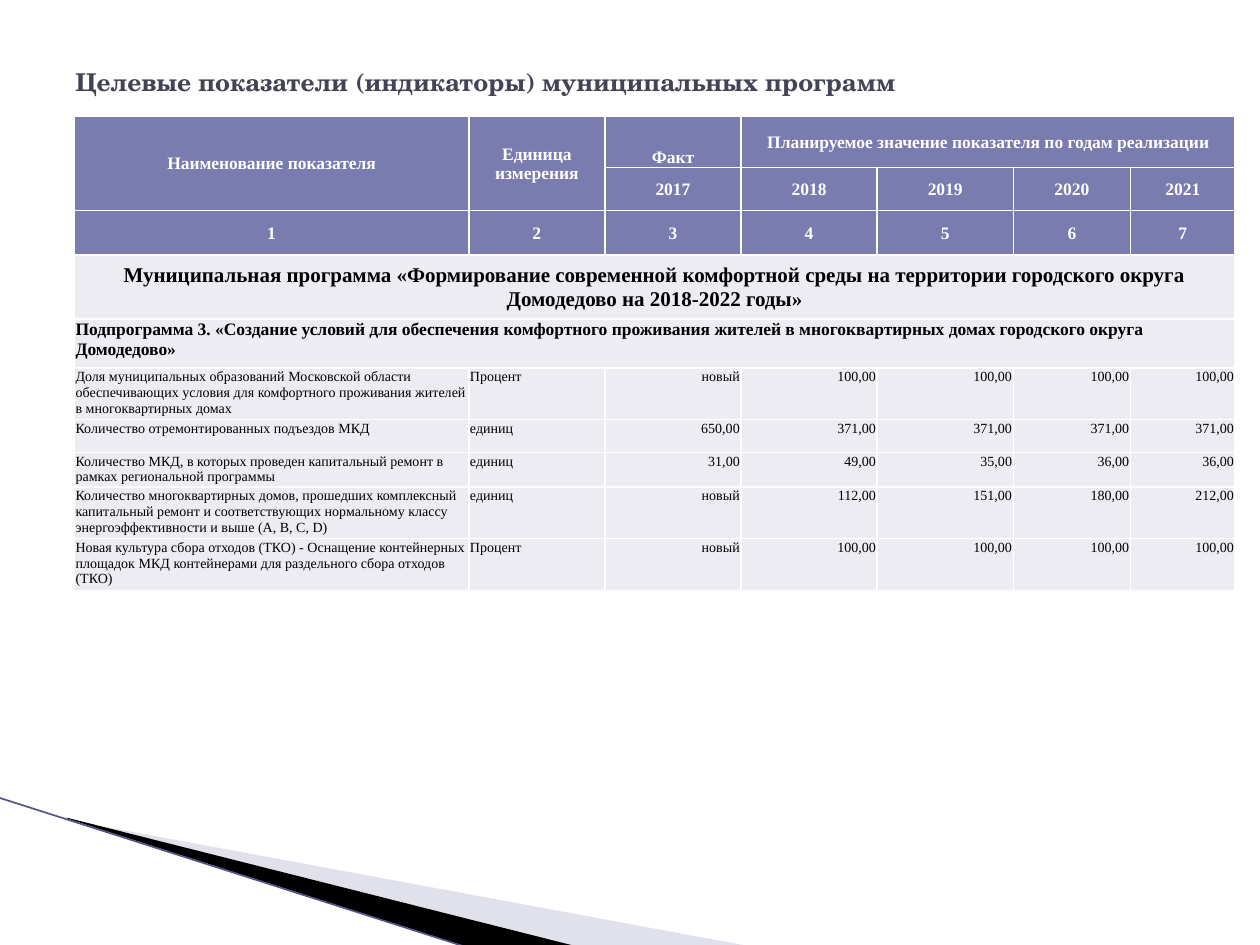
from dataclasses import dataclass

from lxml.etree import SubElement
from pptx import Presentation
from pptx.dml.color import RGBColor
from pptx.enum.text import MSO_ANCHOR as Anchor, PP_ALIGN as Align
from pptx.oxml.ns import qn
from pptx.util import Pt


@dataclass(frozen=True)
class Theme:
    title_font: str = "TeX Gyre Schola"
    table_font: str = "Times New Roman"
    title_color: str = "424456"
    header_fill: str = "7A7BAE"
    body_fill: str = "ECECF2"
    white: str = "FFFFFF"
    black: str = "000000"
    pale_wedge: str = "B6B6D1"
    wedge_line: str = "53548A"
    title_size: float = 14
    program_size: float = 12
    header_size: float = 10
    body_size: float = 8


COLUMN_WIDTHS = [225.4, 77.8, 77.8, 77.8, 77.8, 67, 59.8]
ROW_HEIGHTS = [29.5, 20.9, 25.2, 36.7, 28.1] + [18.7] * 5
HEADER_ROWS = [
    ["Наименование показателя", "Единица измерения", "Факт",
     "Планируемое значение показателя по годам реализации", "", "", ""],
    ["", "", "2017", "2018", "2019", "2020", "2021"],
    [str(number) for number in range(1, 8)],
]
PROGRAM = ("Муниципальная программа «Формирование современной комфортной среды "
           "на территории городского округа Домодедово на 2018-2022 годы»")
SUBPROGRAM = ("Подпрограмма 3. «Создание условий для обеспечения комфортного проживания "
              "жителей в многоквартирных домах городского округа Домодедово»")
INDICATORS = [
    ["Доля муниципальных образований Московской области обеспечивающих условия "
     "для комфортного проживания жителей в многоквартирных домах",
     "Процент", "новый", "100,00", "100,00", "100,00", "100,00"],
    ["Количество отремонтированных подъездов МКД",
     "единиц", "650,00", "371,00", "371,00", "371,00", "371,00"],
    ["Количество МКД, в которых проведен капитальный ремонт в рамках "
     "региональной программы",
     "единиц", "31,00", "49,00", "35,00", "36,00", "36,00"],
    ["Количество многоквартирных домов, прошедших комплексный капитальный ремонт "
     "и соответствующих нормальному классу энергоэффективности и выше (A, B, C, D)",
     "единиц", "новый", "112,00", "151,00", "180,00", "212,00"],
    ["Новая культура сбора отходов (ТКО) - Оснащение контейнерных площадок МКД "
     "контейнерами для раздельного сбора отходов (ТКО)",
     "Процент", "новый", "100,00", "100,00", "100,00", "100,00"],
]
# (first row, first column, last row, last column)
MERGES = [(0, 0, 1, 0), (0, 1, 1, 1), (0, 3, 0, 6), (3, 0, 3, 6), (4, 0, 4, 6)]


def set_values(target, values):
    for name, value in values.items():
        setattr(target, name, value)


class SlideBuilder:
    def __init__(self, slide, theme):
        self.slide = slide
        self.theme = theme

    def add_text(self, text_frame, text, font, size, color, align=Align.LEFT, bold=True):
        paragraph = text_frame.paragraphs[0]
        paragraph.alignment = align
        run = paragraph.add_run()
        run.text = text
        set_values(run.font, {"name": font, "size": Pt(size), "bold": bold})
        run.font.color.rgb = RGBColor.from_string(color)

    def title(self, text, left, top, width, height):
        shape = self.slide.shapes.add_textbox(Pt(left), Pt(top), Pt(width), Pt(height))
        set_values(shape.text_frame,
                   {"word_wrap": True, "vertical_anchor": Anchor.MIDDLE})
        self.add_text(shape.text_frame, text, self.theme.title_font,
                      self.theme.title_size, self.theme.title_color)

    def wedge(self, points, color, opacity=100):
        corners = [(Pt(x), Pt(y)) for x, y in points]
        builder = self.slide.shapes.build_freeform(*corners[0], scale=1.0)
        builder.add_line_segments(corners[1:], close=True)
        shape = builder.convert_to_shape()
        shape.shadow.inherit = False
        shape.line.fill.background()
        shape.fill.solid()
        shape.fill.fore_color.rgb = RGBColor.from_string(color)
        if opacity < 100:
            color_node = shape.element.spPr.find(qn("a:solidFill"))[0]
            SubElement(color_node, qn("a:alpha"), val=str(opacity * 1000))

    def line(self, start, end, color, width):
        connector = self.slide.shapes.add_connector(
            1, *(Pt(value) for value in start + end))
        connector.line.width = Pt(width)
        connector.line.color.rgb = RGBColor.from_string(color)
        SubElement(connector.element.spPr, qn("a:effectLst"))

    def borders(self, cell):
        properties = cell._tc.get_or_add_tcPr()
        for side in ("lnL", "lnR", "lnT", "lnB"):
            border = SubElement(properties, qn(f"a:{side}"), w=str(Pt(1)))
            fill = SubElement(border, qn("a:solidFill"))
            SubElement(fill, qn("a:srgbClr"), val=self.theme.white)

    def cell(self, cell, text, fill, anchor, **style):
        set_values(cell, {"margin_left": Pt(0.7), "margin_right": Pt(0.7),
                          "margin_top": Pt(0.7), "margin_bottom": 0,
                          "vertical_anchor": anchor})
        self.borders(cell)
        cell.fill.solid()
        cell.fill.fore_color.rgb = RGBColor.from_string(fill)
        if text:
            self.add_text(cell.text_frame, text, self.theme.table_font, **style)

    def table(self, left, top, height):
        theme = self.theme
        frame = self.slide.shapes.add_table(
            len(ROW_HEIGHTS), len(COLUMN_WIDTHS), Pt(left), Pt(top),
            Pt(sum(COLUMN_WIDTHS)), Pt(height))
        table = frame.table
        set_values(table, {"first_row": False, "horz_banding": False})
        for column, width in zip(table.columns, COLUMN_WIDTHS):
            column.width = Pt(width)
        for row, row_height in zip(table.rows, ROW_HEIGHTS):
            row.height = Pt(row_height)
        frame.height = Pt(height)
        for top_row, first, bottom_row, last in MERGES:
            table.cell(top_row, first).merge(table.cell(bottom_row, last))

        header = {"fill": theme.header_fill, "anchor": Anchor.MIDDLE,
                  "size": theme.header_size, "color": theme.white,
                  "align": Align.CENTER}
        body = {"fill": theme.body_fill, "anchor": Anchor.TOP, "color": theme.black}
        program = {**body, "anchor": Anchor.MIDDLE, "size": theme.program_size,
                   "align": Align.CENTER}
        subprogram = {**body, "size": theme.header_size}
        indicator = {**body, "size": theme.body_size, "bold": False}
        blanks = [""] * (len(COLUMN_WIDTHS) - 1)
        rows = [(texts, header) for texts in HEADER_ROWS]
        rows += [([PROGRAM] + blanks, program), ([SUBPROGRAM] + blanks, subprogram)]
        rows += [(texts, indicator) for texts in INDICATORS]
        for row_index, (texts, style) in enumerate(rows):
            for column_index, text in enumerate(texts):
                cell_style = dict(style)
                if style is indicator and column_index > 1:
                    cell_style["align"] = Align.RIGHT
                if (row_index, column_index) == (0, 2):
                    cell_style["anchor"] = Anchor.BOTTOM
                self.cell(table.cell(row_index, column_index), text, **cell_style)


def main():
    presentation = Presentation()
    set_values(presentation, {"slide_width": Pt(720), "slide_height": Pt(540)})
    theme = Theme()
    builder = SlideBuilder(
        presentation.slides.add_slide(presentation.slide_layouts[6]), theme)
    builder.wedge([(39.6, 468.7), (428.4, 540.7), (328.3, 540.7), (39.6, 468)],
                  theme.pale_wedge, opacity=40)
    builder.wedge([(38.2, 467.3), (329, 540.7), (267.8, 541.4), (38.9, 468)],
                  theme.black)
    builder.line((-0.7, 455.8), (267.1, 541.4), theme.wedge_line, 0.95)
    builder.title("Целевые показатели (индикаторы) муниципальных программ",
                  36, 21.6, 648, 49.7)
    builder.table(42.5, 66.2, 267.1)
    presentation.save("out.pptx")


if __name__ == "__main__":
    main()
